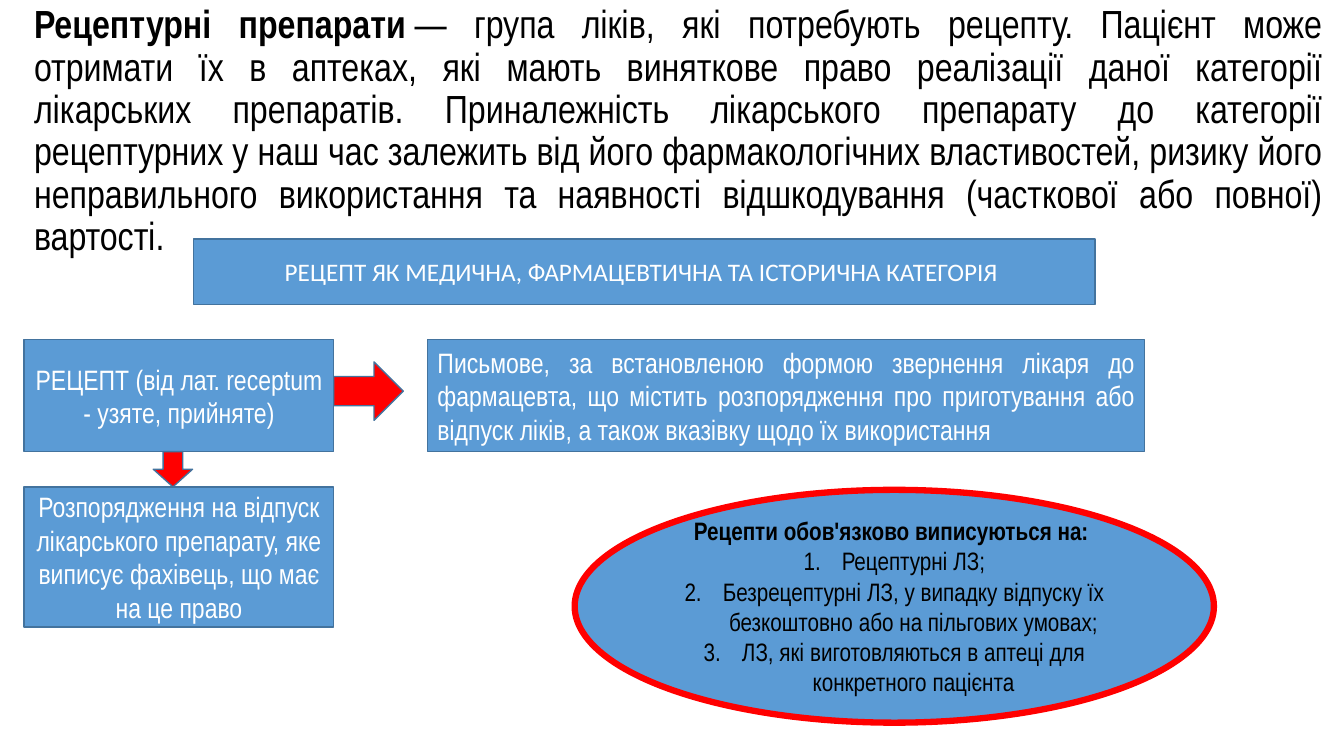
from dataclasses import dataclass

from lxml.etree import SubElement
from pptx import Presentation
from pptx.dml.color import RGBColor as RGB
from pptx.enum.shapes import MSO_SHAPE as Shape
from pptx.enum.text import MSO_ANCHOR as Anchor, PP_ALIGN as Align
from pptx.oxml.ns import qn
from pptx.util import Inches, Pt


@dataclass(frozen=True)
class Theme:
    blue: RGB = RGB(0x5B, 0x9B, 0xD5)
    edge: RGB = RGB(0x43, 0x73, 0x9E)
    red: RGB = RGB(0xFF, 0, 0)
    white: RGB = RGB(0xFF, 0xFF, 0xFF)
    black: RGB = RGB(0, 0, 0)
    narrow: str = "Arial Narrow"
    plain: str = "Calibri"
    lead: int = 28
    body: int = 20
    small: int = 18


T = Theme()
LEFT, SIDE = 0.24, 3.07
ROW, HIGH = 3.37, 1.11
TERM = "Рецептурні препарати"
INTRO = (
    "\u00a0— група ліків, які потребують рецепту. Пацієнт може отримати їх в аптеках, "
    "які мають виняткове право реалізації даної категорії лікарських препаратів. "
    "Приналежність лікарського препарату до категорії рецептурних у наш час залежить "
    "від його фармакологічних властивостей, ризику його неправильного використання "
    "та наявності відшкодування (часткової або повної) вартості."
)
TITLE = "РЕЦЕПТ ЯК МЕДИЧНА, ФАРМАЦЕВТИЧНА ТА ІСТОРИЧНА КАТЕГОРІЯ "
ORIGIN = "РЕЦЕПТ (від лат. receptum - узяте, прийняте)"
MEANING = (
    "Письмове, за встановленою формою звернення лікаря до фармацевта, що містить "
    "розпорядження про приготування або відпуск ліків, а також вказівку щодо їх використання "
)
ORDER = "Розпорядження на відпуск лікарського препарату, яке виписує фахівець, що має на це право"
RULE = "Рецепти обов'язково виписуються на: "
CASES = (
    "Рецептурні ЛЗ;",
    "Безрецептурні ЛЗ, у випадку відпуску їх безкоштовно або на пільгових умовах;",
    "ЛЗ, які виготовляються в аптеці для конкретного пацієнта",
)


def add_run(para, text, color, size, face=T.narrow, bold=False):
    run = para.add_run()
    run.text = text
    look = {"name": face, "size": Pt(size), "bold": bold}
    for key, value in look.items():
        setattr(run.font, key, value)
    run.font.color.rgb = color


def add_form(slide, kind, place, fill=T.blue, edge=T.edge, width=1):
    form = slide.shapes.add_shape(kind, *map(Inches, place))
    form.shadow.inherit = False
    form.fill.solid()
    form.fill.fore_color.rgb = fill
    form.line.color.rgb = edge
    form.line.width = Pt(width)
    form.text_frame.word_wrap = True
    form.text_frame.vertical_anchor = Anchor.MIDDLE
    return form


def add_box(slide, place, text, align=Align.CENTER, size=T.body, face=T.narrow):
    para = add_form(slide, Shape.RECTANGLE, place).text_frame.paragraphs[0]
    para.alignment = align
    add_run(para, text, T.white, size, face)


def add_intro(slide):
    frame = slide.shapes.add_textbox(*map(Inches, (LEFT, 0, 12.97, 7.23))).text_frame
    frame.word_wrap = True
    para = frame.paragraphs[0]
    para.alignment = Align.JUSTIFY
    para.line_spacing = 0.9
    add_run(para, TERM, T.black, T.lead, bold=True)
    add_run(para, INTRO, T.black, T.lead)


def number(para):
    """Turn a paragraph into an auto-numbered item with a hanging indent."""
    props = para._p.get_or_add_pPr()
    indent = Inches(0.38)
    props.set("marL", str(indent))
    props.set("indent", str(-indent))
    SubElement(props, qn("a:buFont"), typeface="+mj-lt")
    SubElement(props, qn("a:buAutoNum"), type="arabicPeriod")


def add_rules(slide):
    oval = add_form(slide, Shape.OVAL, (5.7, 4.86, 6.34, 2.31), edge=T.red, width=4.5)
    frame = oval.text_frame
    head = frame.paragraphs[0]
    head.alignment = Align.CENTER
    add_run(head, RULE, T.black, T.small, bold=True)
    for case in CASES:
        para = frame.add_paragraph()
        para.alignment = Align.CENTER
        number(para)
        add_run(para, case, T.black, T.small)


def main():
    deck = Presentation()
    deck.slide_width, deck.slide_height = Inches(13.33), Inches(7.5)
    slide = deck.slides.add_slide(deck.slide_layouts[6])
    add_intro(slide)
    add_box(slide, (1.92, 2.37, 8.94, 0.65), TITLE, size=T.small, face=T.plain)
    add_box(slide, (LEFT, ROW, SIDE, HIGH), ORIGIN)
    add_box(slide, (4.24, ROW, 7.11, HIGH), MEANING, Align.JUSTIFY)
    add_box(slide, (LEFT, 4.83, SIDE, 1.39), ORDER)
    add_form(slide, Shape.RIGHT_ARROW, (LEFT + SIDE, 3.59, 0.69, 0.58), T.red)
    add_form(slide, Shape.DOWN_ARROW, (1.52, ROW + HIGH, 0.39, 0.35), T.red)
    add_rules(slide)
    deck.save("out.pptx")


if __name__ == "__main__":
    main()
